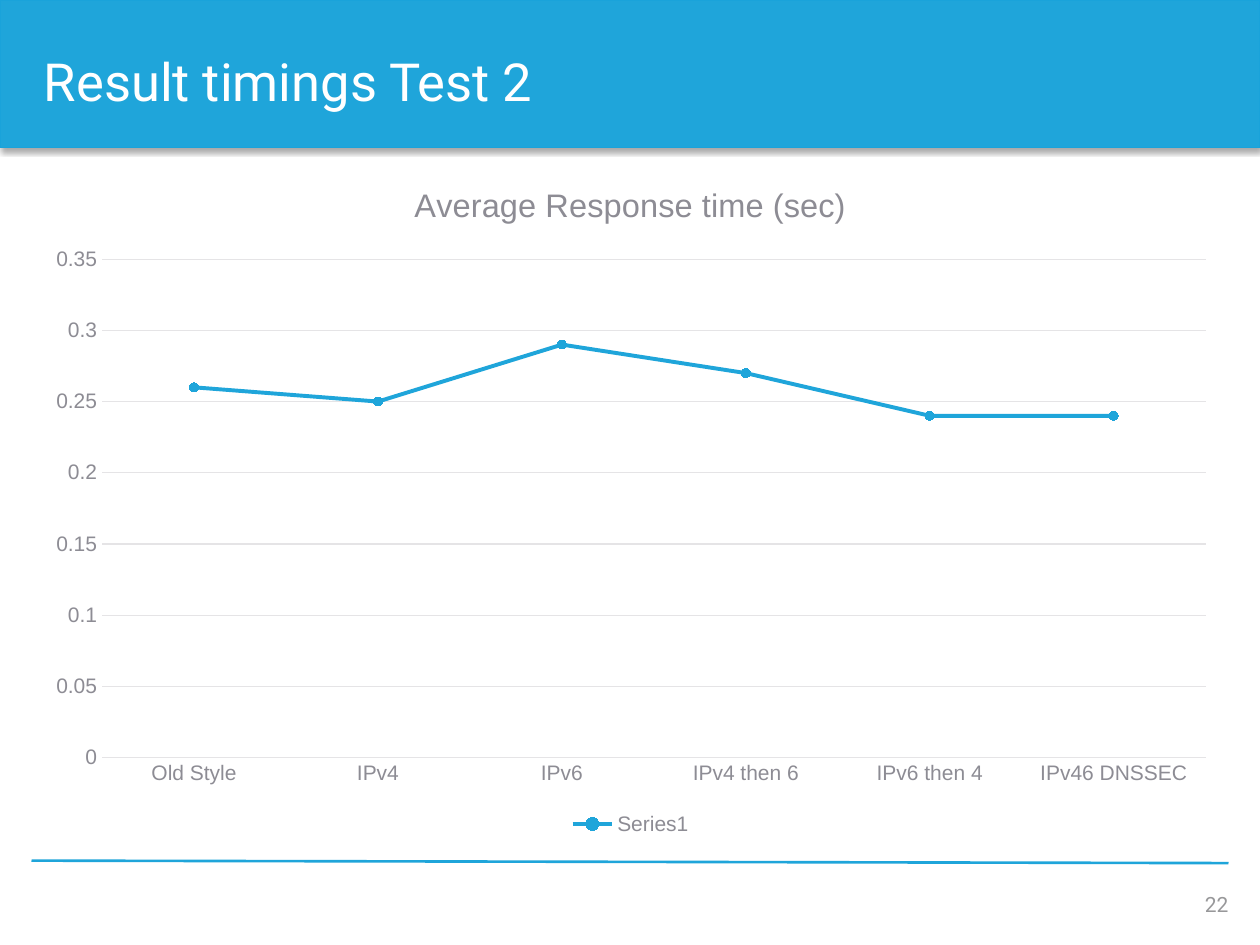
from lxml import etree
from pptx import Presentation
from pptx.chart.data import CategoryChartData
from pptx.dml.color import RGBColor
from pptx.enum import chart as ch, shapes, text
from pptx.oxml import parse_xml
from pptx.oxml.ns import nsdecls, qn
from pptx.util import Pt

BLUE = "1FA5DA"
GRID = "E5E4E6"
GREY = "8D8C94"
TIMINGS = {
    "Old Style": 0.26,
    "IPv4": 0.25,
    "IPv6": 0.29,
    "IPv4 then 6": 0.27,
    "IPv6 then 4": 0.24,
    "IPv46 DNSSEC": 0.24,
}


def rgb(value):
    return RGBColor.from_string(value)


def style_font(font, name, size, color):
    font.name = name
    font.size = Pt(size)
    font.bold = False
    font.color.rgb = rgb(color)


def style_line(line, color, width):
    line.color.rgb = rgb(color)
    line.width = Pt(width)


def add_label(slide, box, words, size, color, align, insets):
    label = slide.shapes.add_textbox(*map(Pt, box))
    frame = label.text_frame
    frame.word_wrap = True
    frame.vertical_anchor = text.MSO_ANCHOR.MIDDLE
    frame.margin_left, frame.margin_top, frame.margin_right, frame.margin_bottom = map(Pt, insets)
    frame.text = words
    paragraph = frame.paragraphs[0]
    paragraph.alignment = align
    style_font(paragraph.runs[0].font, "Roboto", size, color)
    return paragraph


def add_header(slide, left, top, width, height):
    band = slide.shapes.add_shape(shapes.MSO_SHAPE.RECTANGLE, *map(Pt, (left, top, width, height)))
    band.fill.solid()
    band.fill.fore_color.rgb = rgb(BLUE)
    style_line(band.line, "1AA3DA", 0.75)
    band._element.spPr.append(parse_xml(
        f'<a:effectLst {nsdecls("a")}><a:outerShdw blurRad="{Pt(3.1)}" dist="{Pt(1.8)}" '
        'dir="5400000" rotWithShape="0"><a:srgbClr val="000000"><a:alpha val="35000"/>'
        '</a:srgbClr></a:outerShdw></a:effectLst>'))
    heading = add_label(slide, (left + 18, top + 18.2, width - 35.3, 59.8), "Result timings Test 2",
                        30, "FFFFFF", text.PP_ALIGN.LEFT, (7.2, 3.6, 7.2, 3.6))
    heading.line_spacing = 0.9


def add_timing_chart(slide, left, top, width, height):
    data = CategoryChartData()
    data.categories = list(TIMINGS)
    data.add_series("Series1", list(TIMINGS.values()))
    chart = slide.shapes.add_chart(ch.XL_CHART_TYPE.LINE_MARKERS,
                                   *map(Pt, (left, top, width, height)), data).chart
    style_font(chart.font, "Arial", 12, GREY)
    chart.has_title = True
    title = chart.chart_title.text_frame
    title.text = "Average Response time (sec)"
    style_font(title.paragraphs[0].runs[0].font, "Arial", 18.6, GREY)

    chart.has_legend = True
    chart.legend.position = ch.XL_LEGEND_POSITION.BOTTOM
    chart.legend.include_in_layout = False
    style_font(chart.legend.font, "Arial", 12, GREY)

    for axis in (chart.category_axis, chart.value_axis):
        axis.major_tick_mark = axis.minor_tick_mark = ch.XL_TICK_MARK.NONE
        style_font(axis.tick_labels.font, "Arial", 12, GREY)
    style_line(chart.category_axis.format.line, GRID, 0.75)
    values = chart.value_axis
    values.minimum_scale, values.maximum_scale, values.major_unit = 0, 0.35, 0.05
    values.tick_labels.number_format = "General"
    values.tick_labels.number_format_is_linked = False
    values.format.line.fill.background()
    style_line(values.major_gridlines.format.line, GRID, 0.75)

    plot = chart.plots[0]
    plot.vary_by_categories = False
    series = plot.series[0]
    series.smooth = False
    style_line(series.format.line, BLUE, 2.25)
    series.marker.style = ch.XL_MARKER_STYLE.CIRCLE
    series.marker.size = 5
    series.marker.format.fill.solid()
    series.marker.format.fill.fore_color.rgb = rgb(BLUE)
    style_line(series.marker.format.line, BLUE, 0.75)

    area = chart._chartSpace.chart.plotArea
    for layout in area.findall(qn("c:layout")):
        area.remove(layout)
    area.insert(0, parse_xml(
        f'<c:layout {nsdecls("c")}><c:manualLayout><c:layoutTarget val="inner"/>'
        '<c:xMode val="edge"/><c:yMode val="edge"/><c:x val="0.058"/><c:y val="0.149"/>'
        '<c:w val="0.923"/><c:h val="0.73"/></c:manualLayout></c:layout>'))


def add_footer(slide, left, top, width, height):
    rule = slide.shapes.add_connector(shapes.MSO_CONNECTOR.STRAIGHT,
                                      *map(Pt, (left, top, left + width, top + 1.4)))
    style_line(rule.line, BLUE, 1.5)
    etree.SubElement(rule._element.spPr, qn("a:effectLst"))
    number_width = 168
    add_label(slide, (left + width - number_width, top + 1.4, number_width, height), "22",
              12, "98989A", text.PP_ALIGN.RIGHT, (0, 18, 0, 0))


def main():
    deck = Presentation()
    deck.slide_width, deck.slide_height = Pt(720), Pt(540)
    slide = deck.slides.add_slide(deck.slide_layouts[6])
    add_header(slide, 0, 0, 720, 84.3)
    add_footer(slide, 18, 491.8, 684, 28.8)
    add_timing_chart(slide, 18.7, 90, 683.3, 390.2)
    deck.save("out.pptx")


if __name__ == "__main__":
    main()
